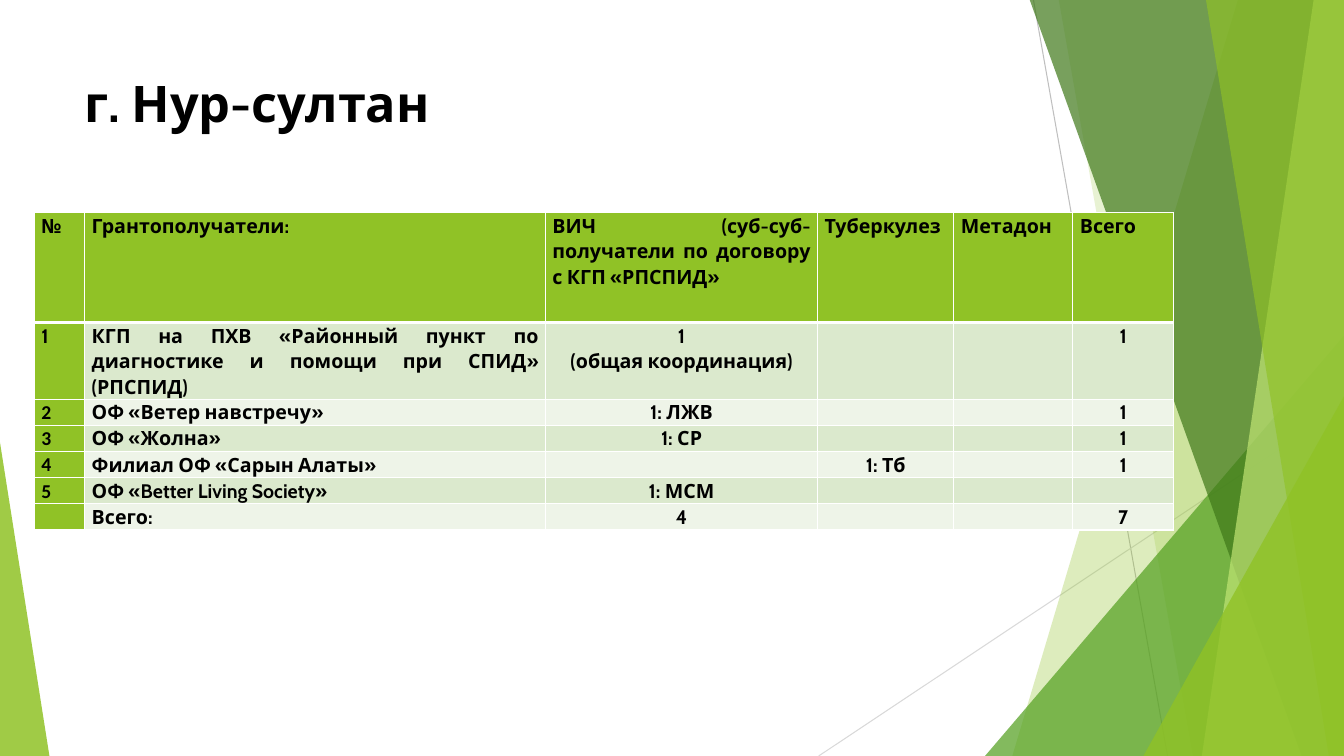
from lxml.etree import SubElement
from pptx import Presentation
from pptx.dml.color import RGBColor
from pptx.enum.shapes import MSO_CONNECTOR as Connector, MSO_SHAPE as Preset
from pptx.enum.text import MSO_ANCHOR as Anchor, MSO_AUTO_SIZE as AutoSize, PP_ALIGN as Align
from pptx.oxml import parse_xml
from pptx.oxml.ns import nsdecls, qn
from pptx.util import Pt

PX = 9144
WIDTH, HEIGHT = 1333, 750
GREEN, WHITE, BLACK = "90C226", "FFFFFF", "000000"
BANDS = ["DBE9CD", "EEF4E8"]

RAYS = [("BFBFBF", 1025, 0, 1158, 750), ("D9D9D9", 1333, 403, 812, 750)]
BACK_BLADES = [(1228, 1004, GREEN, 30), (1050, 1183, GREEN, 20)]
FRONT_BLADES = [
    (1021, 1291, "3F7819", 70),
    (1303, 1192, "C0E474", 70),
    (1196, 1318, GREEN, 65),
]
MIDDLE_WEDGE = (977, 333, 356, 417, 1, "54A021", 72)
CORNER_WEDGES = [(1134, 393, 199, 357, 1, GREEN, 80), (0, 439, 49, 311, 0, GREEN, 85)]

COLUMN_WIDTHS = [50, 457, 270, 135, 118, 100]
ROW_HEIGHTS = [109, 51] + [26] * 5
GRANTEES = [
    ["№", "Грантополучатели:", "ВИЧ (суб-суб-получатели по договору с КГП «РПСПИД»",
     "Туберкулез", "Метадон", "Всего"],
    ["1", "КГП на ПХВ «Районный пункт по диагностике и помощи при СПИД» (РПСПИД)",
     "1\n(общая координация)", "", "", "1"],
    ["2", "ОФ «Ветер навстречу»", "1: ЛЖВ", "", "", "1"],
    ["3", "ОФ «Жолна»", "1: СР", "", "", "1"],
    ["4", "Филиал ОФ «Сарын Алаты»", "", "1: Тб", "", "1"],
    ["5", "ОФ «Better Living Society»", "1: МСМ", "", "", ""],
    ["", "Всего:", "4", "", "", "7"],
]


def px(*lengths):
    return [length * PX for length in lengths]


def color(hex_code):
    return RGBColor.from_string(hex_code)


def paint(shape, hex_code, opacity):
    shape.shadow.inherit = False
    shape.line.fill.background()
    shape.fill.solid()
    shape.fill.fore_color.rgb = color(hex_code)
    tint = shape.element.spPr.find(qn("a:solidFill"))[0]
    SubElement(tint, qn("a:alpha"), val=str(opacity * 1000))


def add_ray(slide, hex_code, *ends):
    ray = slide.shapes.add_connector(Connector.STRAIGHT, *px(*ends))
    ray.line.color.rgb = color(hex_code)
    ray.line.width = Pt(0.75)
    SubElement(ray.element.spPr, qn("a:effectLst"))


def add_blade(slide, top_x, bottom_x, hex_code, opacity):
    outline = slide.shapes.build_freeform(top_x, -1, scale=PX)
    outline.add_line_segments([(WIDTH, -1), (WIDTH, HEIGHT), (bottom_x, HEIGHT)], close=True)
    paint(outline.convert_to_shape(), hex_code, opacity)


def add_wedge(slide, left, top, width, height, apex, hex_code, opacity):
    wedge = slide.shapes.add_shape(Preset.ISOSCELES_TRIANGLE, *px(left, top, width, height))
    wedge.adjustments[0] = apex
    paint(wedge, hex_code, opacity)


def add_decor(slide):
    for ray in RAYS:
        add_ray(slide, *ray)
    for blade in BACK_BLADES:
        add_blade(slide, *blade)
    add_wedge(slide, *MIDDLE_WEDGE)
    for blade in FRONT_BLADES:
        add_blade(slide, *blade)
    for wedge in CORNER_WEDGES:
        add_wedge(slide, *wedge)


def add_run(paragraph, text, size, face="Cabin"):
    run = paragraph.add_run()
    run.text = text
    run.font.size = Pt(size)
    run.font.name = face
    run.font.bold = True
    run.font.color.rgb = color(BLACK)


def place_title(slide, text):
    title = slide.shapes.title
    title.left, title.top, title.width, title.height = px(74, 67, 940, 144)
    frame = title.text_frame
    frame.auto_size = AutoSize.NONE
    frame.vertical_anchor = Anchor.TOP
    heading = frame.paragraphs[0]
    heading.alignment = Align.LEFT
    add_run(heading, text, 36)
    slide.shapes.element.append(title.element)


def add_borders(cell, header_edge):
    widths = {"L": 1, "R": 1, "T": 3 if header_edge == "T" else 1,
              "B": 3 if header_edge == "B" else 1}
    properties = cell._tc.get_or_add_tcPr()
    for position, (side, width) in enumerate(widths.items()):
        border = parse_xml(
            f'<a:ln{side} {nsdecls("a")} w="{Pt(width)}"><a:solidFill>'
            f'<a:srgbClr val="{WHITE}"/></a:solidFill></a:ln{side}>')
        properties.insert(position, border)


def fill_cell(cell, text, row, column):
    cell.margin_left, cell.margin_right = px(7, 7)
    cell.margin_top = cell.margin_bottom = 0
    cell.fill.solid()
    is_label = row == 0 or column == 0
    cell.fill.fore_color.rgb = color(GREEN if is_label else BANDS[(row - 1) % 2])
    add_borders(cell, {0: "B", 1: "T"}.get(row))
    face = "Calibri" if column == 0 and row > 1 else "Cabin"
    frame = cell.text_frame
    for number, line in enumerate(text.split("\n")):
        paragraph = frame.add_paragraph() if number else frame.paragraphs[0]
        paragraph.alignment = Align.JUSTIFY if row == 0 or column < 2 else Align.CENTER
        paragraph.line_spacing = 1.07
        if line:
            add_run(paragraph, line, 14, face)
        else:
            SubElement(paragraph._p, qn("a:endParaRPr"), sz="1400")


def add_grantee_table(slide):
    grantees = slide.shapes.add_table(
        len(ROW_HEIGHTS), len(COLUMN_WIDTHS),
        *px(34, 211, sum(COLUMN_WIDTHS), sum(ROW_HEIGHTS))).table
    for column, width in zip(grantees.columns, px(*COLUMN_WIDTHS)):
        column.width = width
    for row, height in zip(grantees.rows, px(*ROW_HEIGHTS)):
        row.height = height
    for row, texts in enumerate(GRANTEES):
        for column, text in enumerate(texts):
            fill_cell(grantees.cell(row, column), text, row, column)


def main():
    deck = Presentation()
    deck.slide_width, deck.slide_height = px(WIDTH, HEIGHT)
    slide = deck.slides.add_slide(deck.slide_layouts[5])
    add_decor(slide)
    place_title(slide, "г. Нур-султан")
    add_grantee_table(slide)
    deck.save("out.pptx")


if __name__ == "__main__":
    main()
